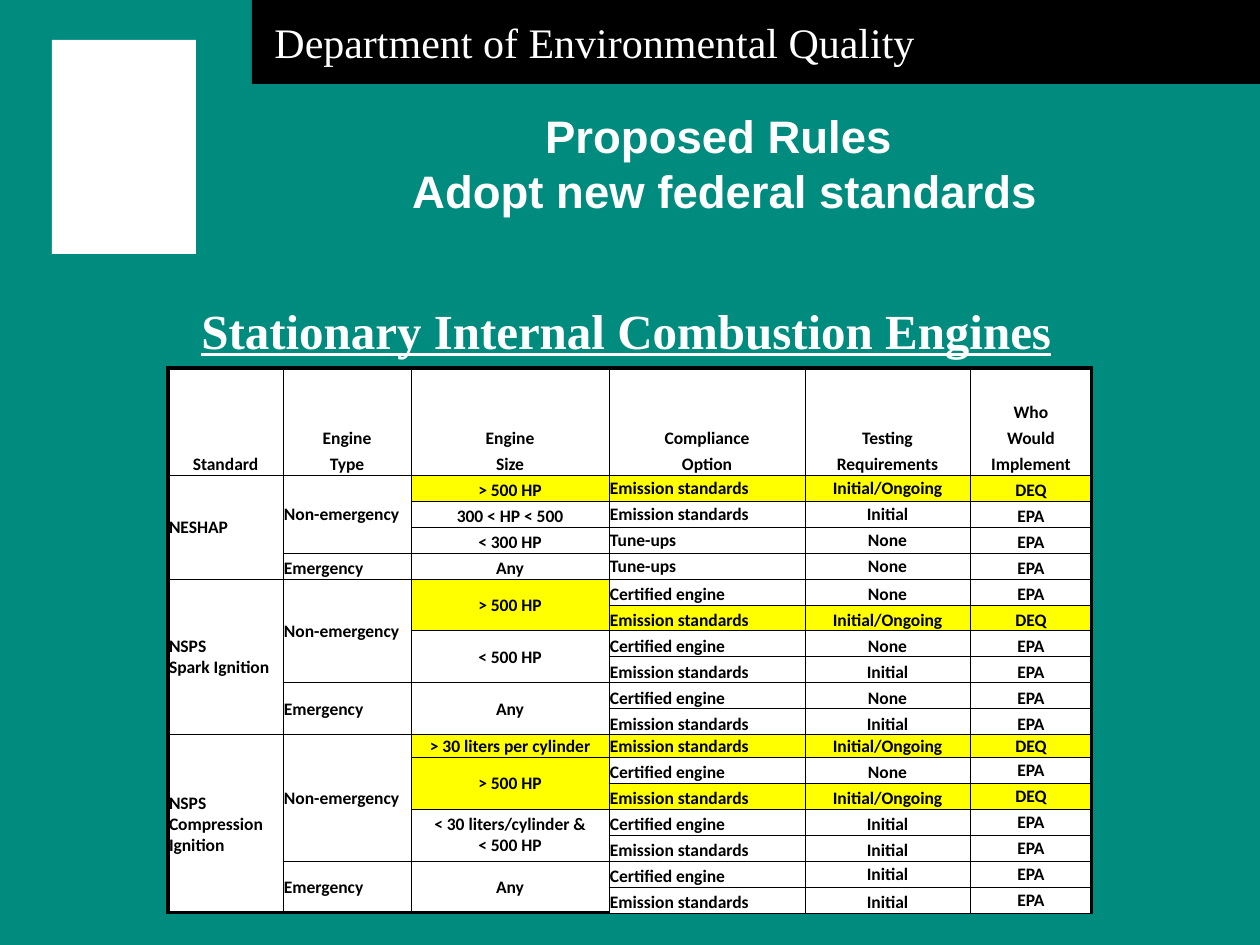
from lxml import etree
from pptx import Presentation, util as u
from pptx.dml.color import RGBColor
from pptx.enum import shapes, text
from pptx.oxml.ns import qn

HUES = {"teal": "008B7F", "white": "FFFFFF", "black": "000000", "yellow": "FFFF00"}
PX = 914400 / 126
NOGRID = "{2D5ABB26-0587-4C30-8999-92F81FD0307C}"

# Content: header rows, then (text, row count) stacks for the first three columns
HEAD = [
    ("", "", "", "", "", ""),
    ("", "", "", "", "", "Who"),
    ("", "Engine", "Engine", "Compliance", "Testing", "Would"),
    ("Standard", "Type", "Size", "Option", "Requirements", "Implement"),
]
STACKS = [
    [("NESHAP", 4), ("NSPS\nSpark Ignition", 6), ("NSPS\nCompression Ignition", 7)],
    [("Non-emergency", 3), ("Emergency", 1), ("Non-emergency", 4), ("Emergency", 2),
     ("Non-emergency", 5), ("Emergency", 2)],
    [("> 500 HP", 1), ("300 < HP < 500", 1), ("< 300 HP", 1), ("Any", 1),
     ("> 500 HP", 2), ("< 500 HP", 2), ("Any", 2), ("> 30 liters per cylinder", 1),
     ("> 500 HP", 2), ("< 30 liters/cylinder &\n< 500 HP", 2), ("Any", 2)],
]
EMIT, CERT, TUNE = "Emission standards", "Certified engine", "Tune-ups"
BOTH = "Initial/Ongoing"
RULES = [
    (EMIT, BOTH, "DEQ"), (EMIT, "Initial", "EPA"), (TUNE, "None", "EPA"),
    (TUNE, "None", "EPA"),
    (CERT, "None", "EPA"), (EMIT, BOTH, "DEQ"), (CERT, "None", "EPA"),
    (EMIT, "Initial", "EPA"), (CERT, "None", "EPA"), (EMIT, "Initial", "EPA"),
    (EMIT, BOTH, "DEQ"), (CERT, "None", "EPA"), (EMIT, BOTH, "DEQ"),
    (CERT, "Initial", "EPA"), (EMIT, "Initial", "EPA"), (CERT, "Initial", "EPA"),
    (EMIT, "Initial", "EPA"),
]
WIDTHS = [115, 128, 198, 196, 165, 122]
TOP, LAST = len(HEAD), len(HEAD) + len(RULES) - 1
LITER = TOP + 10  # the shorter row that opens the third standard
TALLS = [29 if r == 0 else 22 if r == LITER else 26 for r in range(LAST + 1)]


def px(n):
    return u.Emu(round(n * PX))


def hue(name):
    return RGBColor.from_string(HUES[name])


def write(frame, words, size=10, font="Calibri", color="black", bold=True,
          line=False, center=False):
    for i, part in enumerate(words.split("\n")):
        para = frame.paragraphs[0] if i == 0 else frame.add_paragraph()
        para.text = part
        para.alignment = text.PP_ALIGN.CENTER if center else text.PP_ALIGN.LEFT
        for run in para.runs:
            f = run.font
            f.size, f.name, f.bold, f.underline = u.Pt(size), font, bold, line
            f.color.rgb = hue(color)
        if not part:
            etree.SubElement(para._p, qn("a:endParaRPr"), sz=str(size * 100))


def block(slide, box, color):
    rect = slide.shapes.add_shape(shapes.MSO_SHAPE.RECTANGLE, *map(px, box))
    rect.shadow.inherit = False
    rect.fill.solid()
    rect.fill.fore_color.rgb = hue(color)
    rect.line.fill.background()


def label(slide, box, words, middle=False, **style):
    frame = slide.shapes.add_textbox(*map(px, box)).text_frame
    frame.word_wrap = True
    if middle:
        frame.vertical_anchor = text.MSO_ANCHOR.MIDDLE
    write(frame, words, color="white", **style)


def border(cell, sides):
    props = cell._tc.get_or_add_tcPr()
    for i, side in enumerate(s for s in "LRTB" if s in sides):
        ln = etree.Element(qn("a:ln" + side), w=str(int(sides[side] * 12700)))
        fill = etree.SubElement(ln, qn("a:solidFill"))
        etree.SubElement(fill, qn("a:srgbClr"), val=HUES["black"])
        props.insert(i, ln)


def low(r, c, span):
    """True where the text sits at the bottom of its cell."""
    if r < TOP:
        return True
    if c < 3:
        return span == 1 and r < TOP + 4 and c > 0
    if c == 5:
        return r < LITER
    return r >= TOP + 4 and (r, c) != (LAST - 1, 4)


def put(table, r, c, words, span=1):
    end = r + span - 1
    head = r < TOP
    marked = words.startswith(">") or (c > 2 and not head and RULES[r - TOP][2] == "DEQ")
    for k in range(r, end + 1):
        cell = table.cell(k, c)
        cell.margin_left = cell.margin_right = cell.margin_top = px(1)
        cell.margin_bottom = 0
        cell.fill.solid()
        cell.fill.fore_color.rgb = hue("yellow" if marked else "white")
        sides = {"L": 2 if c == 0 else 0.5, "R": 2 if c == 5 else 0.5}
        if k == r and (not head or r == 0):
            sides["T"] = 2 if r == 0 else 0.5
        if k in (r, end) and (not head or r == TOP - 1):
            sides["B"] = 2 if end == LAST and c < 3 else 0.5
        border(cell, sides)
        write(cell.text_frame, words if k == r else "", center=head or c in (2, 4, 5))
    cell = table.cell(r, c)
    anchor = text.MSO_ANCHOR
    cell.vertical_anchor = anchor.BOTTOM if low(r, c, span) else anchor.MIDDLE
    if span > 1:
        cell.merge(table.cell(end, c))


def engines(slide):
    box = (168, 368, sum(WIDTHS), sum(TALLS))
    table = slide.shapes.add_table(len(TALLS), len(WIDTHS), *map(px, box)).table
    table.first_row = table.horz_banding = False
    table._tbl.tblPr.find(qn("a:tableStyleId")).text = NOGRID
    for col, wide in zip(table.columns, WIDTHS):
        col.width = px(wide)
    for row, tall in zip(table.rows, TALLS):
        row.height = px(tall)
    for r, row in enumerate(HEAD):
        for c, words in enumerate(row):
            put(table, r, c, words)
    for c, stack in enumerate(STACKS):
        r = TOP
        for words, span in stack:
            put(table, r, c, words, span)
            r += span
    for r, row in enumerate(RULES, TOP):
        for c, words in enumerate(row, 3):
            put(table, r, c, words)


def main():
    deck = Presentation()
    deck.slide_width, deck.slide_height = px(1260), px(945)
    slide = deck.slides.add_slide(deck.slide_layouts[6])
    slide.background.fill.solid()
    slide.background.fill.fore_color.rgb = hue("teal")

    # Banner
    block(slide, (52, 40, 144, 214), "white")
    block(slide, (252, 0, 1008, 84), "black")
    label(slide, (262, 10, 714, 63), "Department of Environmental Quality",
          size=24, font="Times New Roman", bold=False)

    # Title, table and its heading
    label(slide, (221, 105, 1008, 116), "Proposed Rules \vAdopt new federal standards",
          middle=True, size=26, font="Arial", center=True)
    engines(slide)
    label(slide, (189, 294, 882, 140), "Stationary Internal Combustion Engines",
          size=28, font="Times New Roman", line=True)
    deck.save("out.pptx")


if __name__ == "__main__":
    main()
